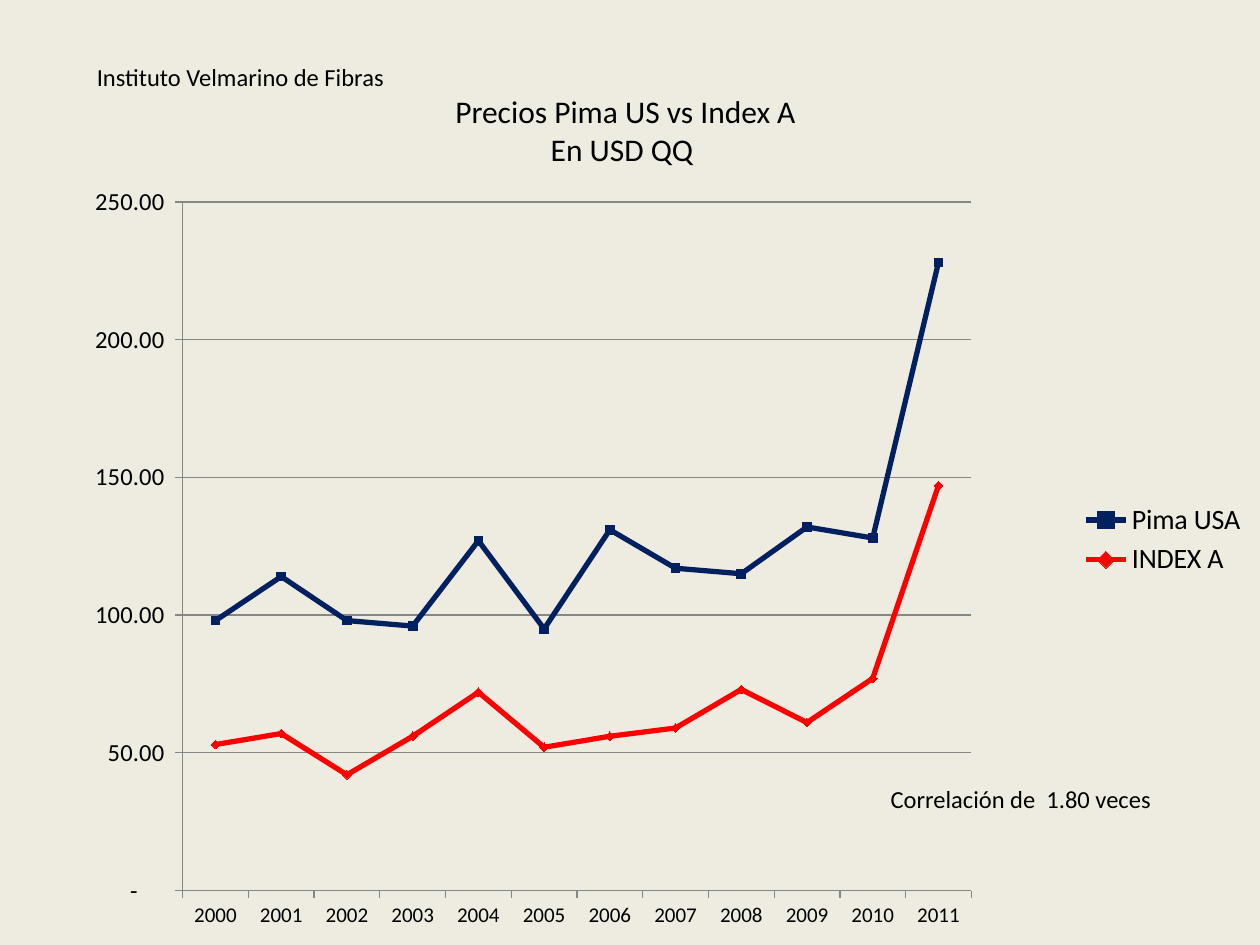
"""Build a slide with a line chart of Pima US prices against Index A."""
from lxml import etree
from pptx import Presentation
from pptx.chart.data import CategoryChartData
from pptx.dml.color import RGBColor
from pptx.enum.chart import XL_CHART_TYPE, XL_LEGEND_POSITION, XL_MARKER_STYLE, XL_TICK_MARK
from pptx.enum.text import MSO_ANCHOR, MSO_AUTO_SIZE, PP_ALIGN
from pptx.oxml import parse_xml
from pptx.oxml.ns import qn
from pptx.util import Inches, Pt

LINE = XL_CHART_TYPE.LINE_MARKERS
RIGHT = XL_LEGEND_POSITION.RIGHT
SQUARE, DIAMOND = XL_MARKER_STYLE.SQUARE, XL_MARKER_STYLE.DIAMOND
OUT = XL_TICK_MARK.OUTSIDE
TOP = MSO_ANCHOR.TOP
GROW = MSO_AUTO_SIZE.SHAPE_TO_FIT_TEXT
LEFT, CENTER = PP_ALIGN.LEFT, PP_ALIGN.CENTER

THEME = {
    "font": "Calibri", "back": "EEECE1", "text": "000000", "grid": "868686",
    "title": 18, "note": 14, "legend": 16, "value": 14, "year": 12,
    "line": 3, "thin": 0.75, "mark": 5,
}
TITLE = ("Precios Pima US vs Index A\nEn USD QQ ", (3.5, 0.68, 2.93, 0.71))
NOTES = [
    ("Instituto Velmarino de Fibras", (0.67, 0.44, 2.59, 0.34)),
    ("Correlación de  1.80 veces", (6.97, 6.17, 2.37, 0.34)),
]
YEARS = [str(year) for year in range(2000, 2012)]
SERIES = [
    ("Pima USA", "002060", SQUARE,
     (98, 114, 98, 96, 127, 95, 131, 117, 115, 132, 128, 228)),
    ("INDEX A", "FF0000", DIAMOND,
     (53, 57, 42, 56, 72, 52, 56, 59, 73, 61, 77, 147)),
]
CHART = (0, 1.07, 10, 6.43)
PLOT = {"x": 0.145, "y": 0.083, "w": 0.626, "h": 0.85}
FORMAT = r'_(* #,##0.00_);_(* \(#,##0.00\);_(* "-"??_);_(@_)'
CLEAR = (
    '<c:spPr xmlns:c="http://schemas.openxmlformats.org/drawingml/2006/chart" '
    'xmlns:a="http://schemas.openxmlformats.org/drawingml/2006/main">'
    "<a:noFill/><a:ln><a:noFill/></a:ln></c:spPr>"
)


def color(name):
    return RGBColor.from_string(THEME.get(name, name))


def style(font, size):
    font.name = THEME["font"]
    font.size = Pt(THEME[size])
    font.bold = False
    font.color.rgb = color("text")


def stroke(line, name, width):
    line.color.rgb = color(name)
    line.width = Pt(THEME[width])


def write(shape, text, box, size, align):
    shape.left, shape.top, shape.width, shape.height = map(Inches, box)
    frame = shape.text_frame
    frame.text = text
    frame.word_wrap = False
    frame.auto_size = GROW
    frame.vertical_anchor = TOP
    for para in frame.paragraphs:
        para.alignment = align
        for run in para.runs:
            style(run.font, size)


def place(chart):
    area = chart._chartSpace.chart.plotArea
    for old in area.findall(qn("c:layout")):
        area.remove(old)
    layout = etree.Element(qn("c:layout"))
    area.insert(0, layout)
    manual = etree.SubElement(layout, qn("c:manualLayout"))
    rules = {"layoutTarget": "inner", "xMode": "edge", "yMode": "edge", **PLOT}
    for key, val in rules.items():
        etree.SubElement(manual, qn("c:" + key)).set("val", str(val))
    chart._chartSpace.chart.addnext(parse_xml(CLEAR))


def draw(slide):
    data = CategoryChartData()
    data.categories = YEARS
    for name, _, _, vals in SERIES:
        data.add_series(name, vals)
    chart = slide.shapes.add_chart(LINE, *map(Inches, CHART), data).chart
    chart.has_title = False
    style(chart.font, "legend")
    chart.has_legend = True
    chart.legend.position = RIGHT
    chart.legend.include_in_layout = False
    style(chart.legend.font, "legend")
    for axis, size in ((chart.category_axis, "year"), (chart.value_axis, "value")):
        axis.major_tick_mark = OUT
        style(axis.tick_labels.font, size)
        stroke(axis.format.line, "grid", "thin")
    scale = chart.value_axis
    scale.minimum_scale, scale.maximum_scale, scale.major_unit = 0, 250, 50
    scale.tick_labels.number_format = FORMAT
    scale.tick_labels.number_format_is_linked = False
    scale.has_major_gridlines = True
    stroke(scale.major_gridlines.format.line, "grid", "thin")
    plot = chart.plots[0]
    plot.vary_by_categories = False
    for line, (_, tint, mark, _) in zip(plot.series, SERIES):
        line.smooth = False
        stroke(line.format.line, tint, "line")
        line.marker.style = mark
        line.marker.size = THEME["mark"]
        line.marker.format.fill.solid()
        line.marker.format.fill.fore_color.rgb = color(tint)
        stroke(line.marker.format.line, tint, "thin")
    place(chart)


def main():
    deck = Presentation()
    deck.slide_width, deck.slide_height = Inches(10), Inches(7.5)
    slide = deck.slides.add_slide(deck.slide_layouts[5])
    slide.background.fill.solid()
    slide.background.fill.fore_color.rgb = color("back")
    draw(slide)
    write(slide.shapes.title, *TITLE, "title", CENTER)
    for text, box in NOTES:
        note = slide.shapes.add_textbox(*map(Inches, box))
        write(note, text, box, "note", LEFT)
    deck.save("out.pptx")


if __name__ == "__main__":
    main()
